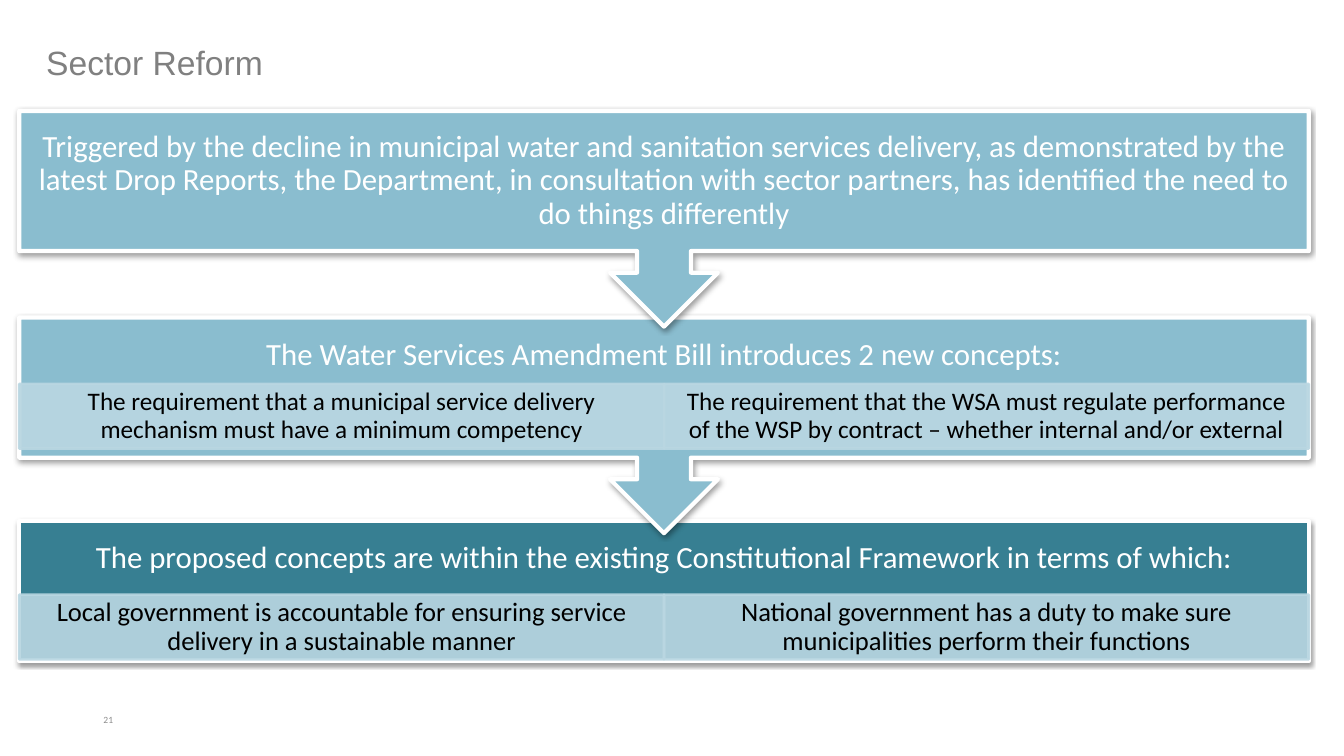
from dataclasses import dataclass

import lxml.etree
import pptx
import pptx.dml.color
import pptx.enum.shapes
import pptx.enum.text
import pptx.oxml.ns
import pptx.util

SHAPES = pptx.enum.shapes.MSO_SHAPE
ALIGN = pptx.enum.text.PP_ALIGN
ANCHOR = pptx.enum.text.MSO_ANCHOR
SLIDE_WIDTH = pptx.util.Inches(13.33)
SLIDE_HEIGHT = pptx.util.Inches(7.5)

# Lengths are percentages of the slide's width or height.
FLOW_LEFT, FLOW_WIDTH = 1.43, 95.95
BODY_HEIGHT, CALLOUT_HEIGHT = 18.53, 28.53
HEADING_HEIGHT, CELL_HEIGHT = 10.0, 8.53

PALE, MID, DARK = "BAD7E2", "8ABDCF", "377F92"
WHITE, BLACK = "FFFFFF", "000000"


@dataclass(frozen=True)
class Area:
    left: float
    top: float
    width: float
    height: float

    def emu(self) -> list[int]:
        return [int(share * length / 100) for share, length in (
            (self.left, SLIDE_WIDTH), (self.top, SLIDE_HEIGHT),
            (self.width, SLIDE_WIDTH), (self.height, SLIDE_HEIGHT))]


@dataclass(frozen=True)
class TextStyle:
    size: float
    color: str
    font: str = "Calibri"
    align: ALIGN = ALIGN.CENTER
    anchor: ANCHOR = ANCHOR.MIDDLE
    line_spacing: float = 0.9
    side_inset: float = 0.1
    end_inset: float = 0.05


@dataclass(frozen=True)
class Stage:
    top: float
    heading: str
    fill: str = MID
    leads_on: bool = True
    points: tuple[str, ...] = ()
    points_top: float = 0
    points_size: float = 18


TITLE = TextStyle(24, "808080", font="Arial", align=ALIGN.LEFT)
PAGE_NUMBER = TextStyle(6.8, "8C8C8C", align=ALIGN.RIGHT,
                        anchor=ANCHOR.TOP, line_spacing=1)
HEADING = TextStyle(22, WHITE, side_inset=0.17, end_inset=0.17)

STAGES = (
    Stage(14.67, "Triggered by the decline in municipal water and sanitation "
          "services delivery, as demonstrated by the latest Drop Reports, the "
          "Department, in consultation with sector partners, has identified "
          "the need to do things differently"),
    Stage(42, "The Water Services Amendment Bill introduces 2 new concepts:",
          points=("The requirement that a municipal service delivery mechanism "
                  "must have a minimum competency",
                  "The requirement that the WSA must regulate performance of "
                  "the WSP by contract – whether internal and/or external"),
          points_top=50.8),
    Stage(68.93, "The proposed concepts are within the existing Constitutional "
          "Framework in terms of which:", fill=DARK, leads_on=False,
          points=("Local government is accountable for ensuring service "
                  "delivery in a sustainable manner",
                  "National government has a duty to make sure municipalities "
                  "perform their functions"),
          points_top=78.67, points_size=19),
)


def rgb(color: str) -> pptx.dml.color.RGBColor:
    return pptx.dml.color.RGBColor.from_string(color)


def add_child(parent, tag: str, **attributes: str):
    child = lxml.etree.SubElement(parent, pptx.oxml.ns.qn(tag))
    for key, value in attributes.items():
        child.set(key, value)
    return child


def write(shape, text: str, style: TextStyle, spare_below: float = 0) -> None:
    """Write text, keeping spare_below percent of the slide free under it."""
    frame = shape.text_frame
    frame.word_wrap = True
    frame.vertical_anchor = style.anchor
    frame.margin_left = frame.margin_right = pptx.util.Inches(style.side_inset)
    frame.margin_top = pptx.util.Inches(style.end_inset)
    frame.margin_bottom = frame.margin_top + int(SLIDE_HEIGHT * spare_below / 100)
    paragraph = frame.paragraphs[0]
    paragraph.alignment = style.align
    paragraph.line_spacing = style.line_spacing
    run = paragraph.add_run()
    run.text = text
    run.font.name = style.font
    run.font.size = pptx.util.Pt(style.size)
    run.font.color.rgb = rgb(style.color)


def add_block(slide, kind: SHAPES, area: Area, fill: str, line: str, weight: float):
    block = slide.shapes.add_shape(kind, *area.emu())
    block.shadow.inherit = False
    block.fill.solid()
    block.fill.fore_color.rgb = rgb(fill)
    block.line.color.rgb = rgb(line)
    block.line.width = pptx.util.Pt(weight)
    return block


def cast_shadow(block) -> None:
    effects = block.element.spPr.find(pptx.oxml.ns.qn("a:effectLst"))
    shadow = add_child(effects, "a:outerShdw", blurRad=str(pptx.util.Pt(3.1)),
                       dist=str(pptx.util.Pt(1.6)), dir="5400000", rotWithShape="0")
    add_child(add_child(shadow, "a:srgbClr", val=BLACK), "a:alpha", val="38000")


def make_translucent(block, percent: int) -> None:
    """Set the opacity of the fill and the line."""
    for color in block.element.spPr.iter(pptx.oxml.ns.qn("a:srgbClr")):
        add_child(color, "a:alpha", val=str(percent * 1000))


def draw_stage(slide, stage: Stage) -> None:
    kind = SHAPES.DOWN_ARROW_CALLOUT if stage.leads_on else SHAPES.RECTANGLE
    height = CALLOUT_HEIGHT if stage.leads_on else BODY_HEIGHT
    area = Area(FLOW_LEFT, stage.top, FLOW_WIDTH, height)
    body = add_block(slide, kind, area, stage.fill, WHITE, 3)
    cast_shadow(body)
    write(body, stage.heading, HEADING,
          BODY_HEIGHT - HEADING_HEIGHT if stage.points else 0)

    point_style = TextStyle(stage.points_size, BLACK, side_inset=0.14, end_inset=0.03)
    for column, point in enumerate(stage.points):
        width = FLOW_WIDTH / len(stage.points)
        area = Area(FLOW_LEFT + column * width, stage.points_top, width, CELL_HEIGHT)
        cell = add_block(slide, SHAPES.RECTANGLE, area, PALE, PALE, 2)
        make_translucent(cell, 90)
        write(cell, point, point_style)


def main() -> None:
    deck = pptx.Presentation()
    deck.slide_width, deck.slide_height = SLIDE_WIDTH, SLIDE_HEIGHT
    slide = deck.slides.add_slide(deck.slide_layouts[6])
    for text, area, style in (
            ("Sector Reform", Area(2.7, 4.67, 81.1, 7.87), TITLE),
            ("21", Area(0.83, 93.73, 8.33, 5.33), PAGE_NUMBER)):
        write(slide.shapes.add_textbox(*area.emu()), text, style)
    # Bottom stage first, so that each arrow overlaps the stage below it.
    for stage in reversed(STAGES):
        draw_stage(slide, stage)
    deck.save("out.pptx")


if __name__ == "__main__":
    main()
